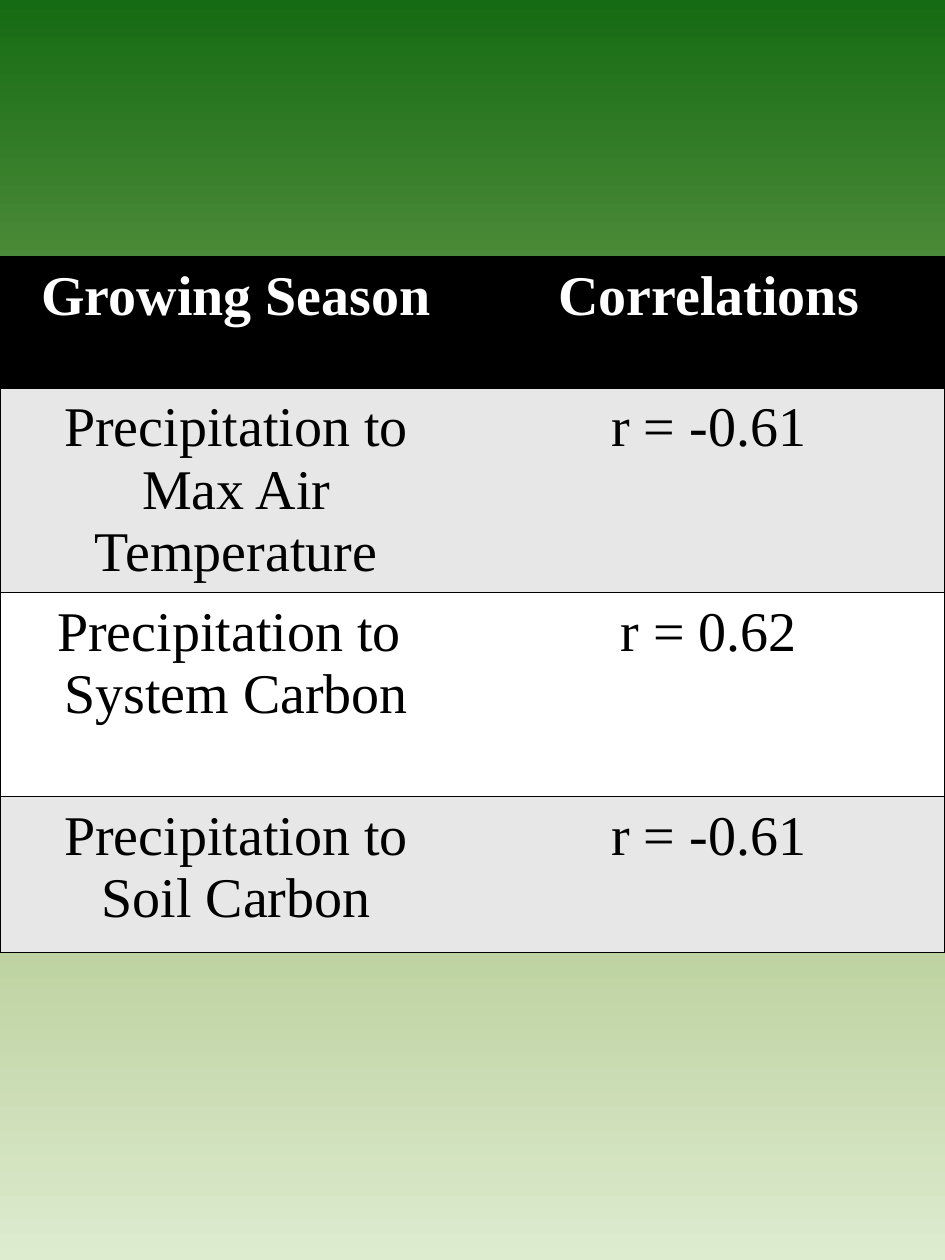
from copy import deepcopy
from dataclasses import dataclass

from lxml import etree
from pptx import Presentation
from pptx import util as u
from pptx.dml.color import RGBColor
from pptx.enum import text
from pptx.oxml import ns

BLACK = RGBColor(0x00, 0x00, 0x00)
WHITE = RGBColor(0xFF, 0xFF, 0xFF)
GREY = RGBColor(0xE7, 0xE7, 0xE7)
GRADIENT = (
    (0, RGBColor(0xDD, 0xEB, 0xCF)),
    (0.5, RGBColor(0x9C, 0xB8, 0x6E)),
    (1, RGBColor(0x15, 0x6B, 0x13)),
)
FONT = "Times New Roman"
PLAIN_STYLE = "{2D5ABB26-0587-4C30-8999-92F81FD0307C}"
PAGE_WIDTH = u.Inches(7.5)
PAGE_HEIGHT = u.Inches(10)
TABLE_TOP = 0.204
MARGIN = u.Inches(0.07)


@dataclass(frozen=True)
class Row:
    label: str
    value: str
    share: float
    fill: RGBColor
    color: RGBColor = BLACK
    bold: bool = False


ROWS = (
    Row("Growing Season", "Correlations", 0.104, BLACK, WHITE, True),
    Row("Precipitation to Max Air Temperature", "r = -0.61", 0.124, GREY),
    Row("Precipitation to \nSystem Carbon", "r = 0.62", 0.162, WHITE),
    Row("Precipitation to\nSoil Carbon", "r = -0.61", 0.124, GREY),
)


def paint_background(page) -> None:
    fill = page.background.fill
    fill.gradient()
    fill.gradient_angle = 90
    first = page.background._cSld.find(".//" + ns.qn("a:gs"))
    first.addnext(deepcopy(first))
    for stop, (position, color) in zip(fill.gradient_stops, GRADIENT):
        stop.position = position
        stop.color.rgb = color


def add_borders(cell, sides: str) -> None:
    properties = cell._tc.get_or_add_tcPr()
    for side in sides:
        line = etree.SubElement(properties, ns.qn(f"a:ln{side}"), w=str(u.Pt(1)))
        solid = etree.SubElement(line, ns.qn("a:solidFill"))
        etree.SubElement(solid, ns.qn("a:srgbClr"), val=str(BLACK))


def fill_cell(cell, words: str, row: Row, sides: str) -> None:
    add_borders(cell, sides)
    cell.fill.solid()
    cell.fill.fore_color.rgb = row.fill
    cell.margin_left = cell.margin_right = MARGIN
    cell.margin_top = cell.margin_bottom = MARGIN
    cell.text_frame.text = words
    for para in cell.text_frame.paragraphs:
        para.alignment = text.PP_ALIGN.CENTER
        for span in para.runs:
            span.font.name = FONT
            span.font.size = u.Pt(32)
            span.font.bold = row.bold
            span.font.color.rgb = row.color


def add_correlations(page) -> None:
    height = sum(row.share for row in ROWS)
    frame = page.shapes.add_table(
        len(ROWS), 2, 0, int(PAGE_HEIGHT * TABLE_TOP),
        PAGE_WIDTH, int(PAGE_HEIGHT * height),
    )
    table = frame.table
    table.horz_banding = False
    table.first_row = False
    table._tbl.tblPr.find(ns.qn("a:tableStyleId")).text = PLAIN_STYLE
    for index, row in enumerate(ROWS):
        table.rows[index].height = int(PAGE_HEIGHT * row.share)
        fill_cell(table.cell(index, 0), row.label, row, "LTB")
        fill_cell(table.cell(index, 1), row.value, row, "RTB")


def main() -> None:
    deck = Presentation()
    deck.slide_width = PAGE_WIDTH
    deck.slide_height = PAGE_HEIGHT
    page = deck.slides.add_slide(deck.slide_layouts[6])
    paint_background(page)
    add_correlations(page)
    deck.save("out.pptx")


if __name__ == "__main__":
    main()
